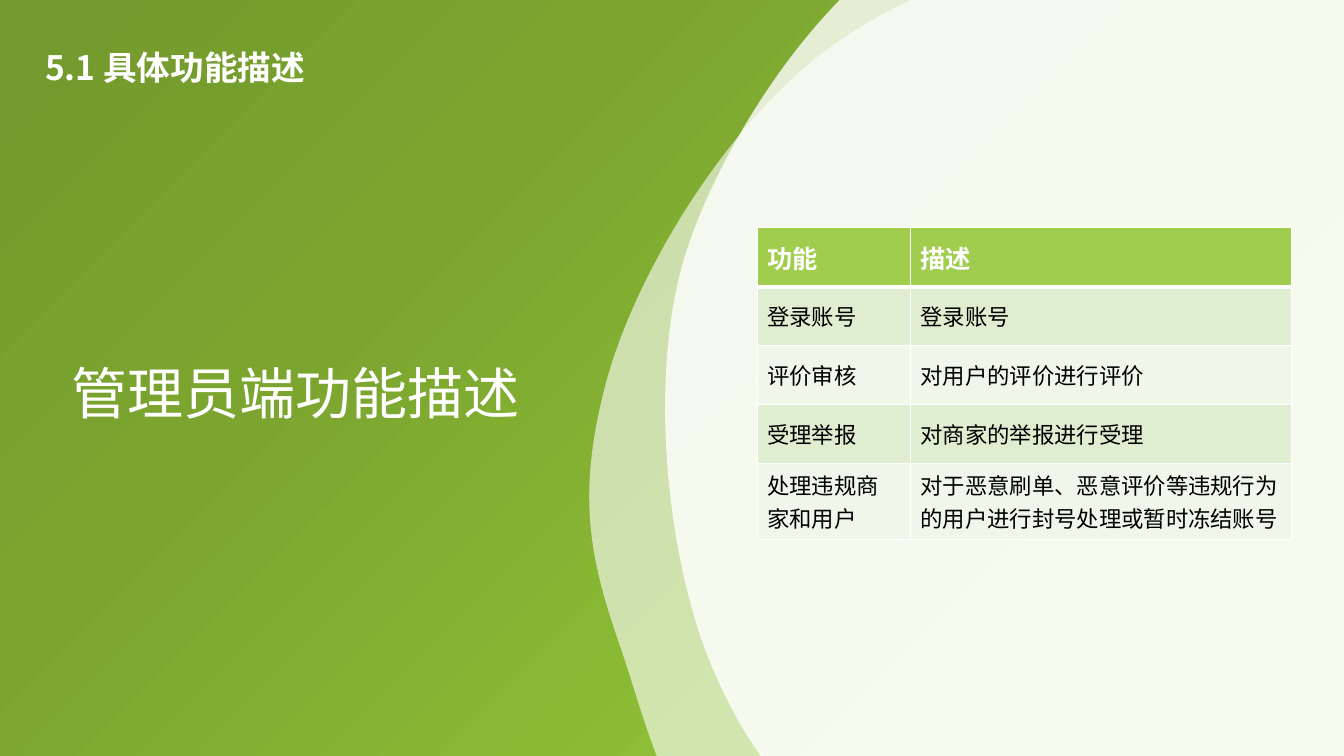
from lxml.etree import SubElement
from pptx import Presentation
from pptx.dml.color import RGBColor
from pptx.enum.shapes import MSO_SHAPE
from pptx.enum.text import MSO_ANCHOR
from pptx.oxml import parse_xml
from pptx.oxml.ns import nsdecls, qn
from pptx.util import Inches, Pt

FONT = "Noto Sans CJK SC"
WHITE = RGBColor(0xFF, 0xFF, 0xFF)
BLACK = RGBColor(0, 0, 0)
HEADER_GREEN = RGBColor(0xA0, 0xCD, 0x4E)
BAND_COLORS = [RGBColor(0xDF, 0xED, 0xD0), RGBColor(0xF0, 0xF6, 0xE9)]
BACKDROP_STOPS = [
    (0, RGBColor(0x92, 0xC4, 0x37)),
    (23, RGBColor(0x92, 0xC4, 0x37)),
    (69, RGBColor(0x7B, 0xA5, 0x2F)),
    (97, RGBColor(0x73, 0x9A, 0x2C)),
]

# Blob outlines: a start point, then cubic segments (two controls, end)
OUTER_BLOB = [
    (6.14, 6.38),
    (5.84, 5.52), (5.72, 4.89), (6.01, 3.8),
    (6.3, 2.71), (7.24, 1.16), (8.29, 0.43),
    (9.33, -0.3), (11.19, -0.9), (12.28, -0.61),
    (13.36, -0.31), (15.37, 1.34), (15.52, 2.71),
    (15.67, 4.08), (14.36, 7.68), (13.07, 8.71),
    (11.78, 9.75), (8.88, 9.21), (7.79, 8.92),
    (6.7, 8.63), (6.44, 7.23), (6.14, 6.38),
]
INNER_BLOB = [
    (8.75, 8.57),
    (7.99, 8.07), (7.5, 7.65), (7.06, 6.61),
    (6.62, 5.57), (6.42, 3.77), (6.79, 2.55),
    (7.17, 1.33), (8.26, -0.27), (9.3, -0.71),
    (10.34, -1.15), (12.94, -1.08), (13.9, -0.09),
    (14.86, 0.91), (16.03, 4.54), (15.65, 6.15),
    (15.27, 7.76), (12.65, 9.12), (11.61, 9.56),
    (10.58, 10), (9.51, 9.06), (8.75, 8.57),
]

TABLE_ROWS = [
    ("功能", "描述"),
    ("登录账号", "登录账号"),
    ("评价审核", "对用户的评价进行评价"),
    ("受理举报", "对商家的举报进行受理"),
    ("处理违规商家和用户", "对于恶意刷单、恶意评价等违规行为的用户进行封号处理或暂时冻结账号"),
]
NAME_WIDTH = 1.52
LAST_ROW_HEIGHT = 0.75


def style_paragraph(paragraph, size, color, bold=False):
    font = paragraph.font
    font.name, font.size, font.bold = FONT, Pt(size), bold
    font.color.rgb = color
    for run in paragraph.runs:
        SubElement(run._r.get_or_add_rPr(), qn("a:ea"), typeface=FONT)


def add_backdrop(slide, left, top, width, height):
    backdrop = slide.shapes.add_shape(
        MSO_SHAPE.RECTANGLE, Inches(left), Inches(top), Inches(width), Inches(height))
    backdrop.shadow.inherit = False
    backdrop.line.fill.background()
    # Radial gradient centred on the bottom right corner
    stops = "".join(
        f'<a:gs pos="{position * 1000}"><a:srgbClr val="{color}"/></a:gs>'
        for position, color in BACKDROP_STOPS)
    gradient = parse_xml(
        f'<a:gradFill {nsdecls("a")} rotWithShape="1"><a:gsLst>{stops}</a:gsLst>'
        '<a:path path="circle"><a:fillToRect l="100000" t="100000"/></a:path>'
        '<a:tileRect r="-100000" b="-100000"/></a:gradFill>')
    backdrop.fill.gradient()
    properties = backdrop._element.spPr
    properties.replace(properties.find(qn("a:gradFill")), gradient)


def add_blob(slide, outline, opacity):
    points = [(Inches(x), Inches(y)) for x, y in outline]
    builder = slide.shapes.build_freeform(*points[0])
    builder.add_line_segments(points[3::3], close=True)
    blob = builder.convert_to_shape()
    blob.shadow.inherit = False
    # Bend each straight segment into a cubic curve
    properties = blob._element.spPr
    for index, segment in enumerate(list(properties.iter(qn("a:lnTo")))):
        segment.tag = qn("a:cubicBezTo")
        segment.remove(segment[0])
        for x, y in points[3 * index + 1:3 * index + 4]:
            SubElement(segment, qn("a:pt"), x=str(x - blob.left), y=str(y - blob.top))
    blob.line.fill.background()
    blob.fill.solid()
    blob.fill.fore_color.rgb = WHITE
    color = properties.find(qn("a:solidFill"))[0]
    SubElement(color, qn("a:alpha"), val=str(opacity * 1000))


def add_text(slide, text, left, top, width, height, size, bold=False,
             line_spacing=1.0, space_before=0, anchor=MSO_ANCHOR.TOP, wrap=True):
    box = slide.shapes.add_textbox(
        Inches(left), Inches(top), Inches(width), Inches(height))
    frame = box.text_frame
    frame.word_wrap = wrap
    frame.vertical_anchor = anchor
    paragraph = frame.paragraphs[0]
    paragraph.text = text
    paragraph.line_spacing = line_spacing
    paragraph.space_before = Pt(space_before)
    style_paragraph(paragraph, size, WHITE, bold)


def set_borders(cell, top, bottom):
    properties = cell._tc.get_or_add_tcPr()
    for side, points in (("L", 1), ("R", 1), ("T", top), ("B", bottom)):
        line = SubElement(properties, qn(f"a:ln{side}"), w=str(Pt(points)))
        fill = SubElement(line, qn("a:solidFill"))
        SubElement(fill, qn("a:srgbClr"), val=str(WHITE))


def add_function_table(slide, left, top, width, height):
    table = slide.shapes.add_table(
        len(TABLE_ROWS), len(TABLE_ROWS[0]), Inches(left), Inches(top),
        Inches(width), Inches(height)).table
    table.columns[0].width = Inches(NAME_WIDTH)
    table.columns[1].width = Inches(width - NAME_WIDTH)
    # The two-line last row is taller; the others share the rest
    row_height = (height - LAST_ROW_HEIGHT) / (len(TABLE_ROWS) - 1)
    for row_index, texts in enumerate(TABLE_ROWS):
        header = row_index == 0
        last = row_index == len(TABLE_ROWS) - 1
        table.rows[row_index].height = Inches(LAST_ROW_HEIGHT if last else row_height)
        for column_index, text in enumerate(texts):
            cell = table.cell(row_index, column_index)
            cell.text = text
            cell.vertical_anchor = MSO_ANCHOR.MIDDLE
            set_borders(cell, top=3 if row_index == 1 else 1, bottom=3 if header else 1)
            cell.fill.solid()
            cell.fill.fore_color.rgb = (
                HEADER_GREEN if header else BAND_COLORS[(row_index - 1) % 2])
            style_paragraph(cell.text_frame.paragraphs[0], 18 if header else 16,
                            WHITE if header else BLACK, header)


def main():
    presentation = Presentation()
    presentation.slide_width, presentation.slide_height = Inches(13.33), Inches(7.5)
    slide = presentation.slides.add_slide(presentation.slide_layouts[6])

    # Background
    add_backdrop(slide, 0, 0, 13.33, 7.5)
    add_blob(slide, OUTER_BLOB, opacity=60)
    add_blob(slide, INNER_BLOB, opacity=80)

    # Section heading, function table and slide title
    add_text(slide, "5.1 具体功能描述", 0.35, 0.29, 5.8, 0.79, size=24, bold=True,
             line_spacing=0.9, space_before=10, anchor=MSO_ANCHOR.MIDDLE)
    add_function_table(slide, 7.51, 2.26, 5.3, 3.09)
    add_text(slide, "管理员端功能描述", 0.61, 3.31, 4.65, 0.89, size=40,
             line_spacing=1.3, space_before=6, wrap=False)

    presentation.save("out.pptx")


if __name__ == "__main__":
    main()
